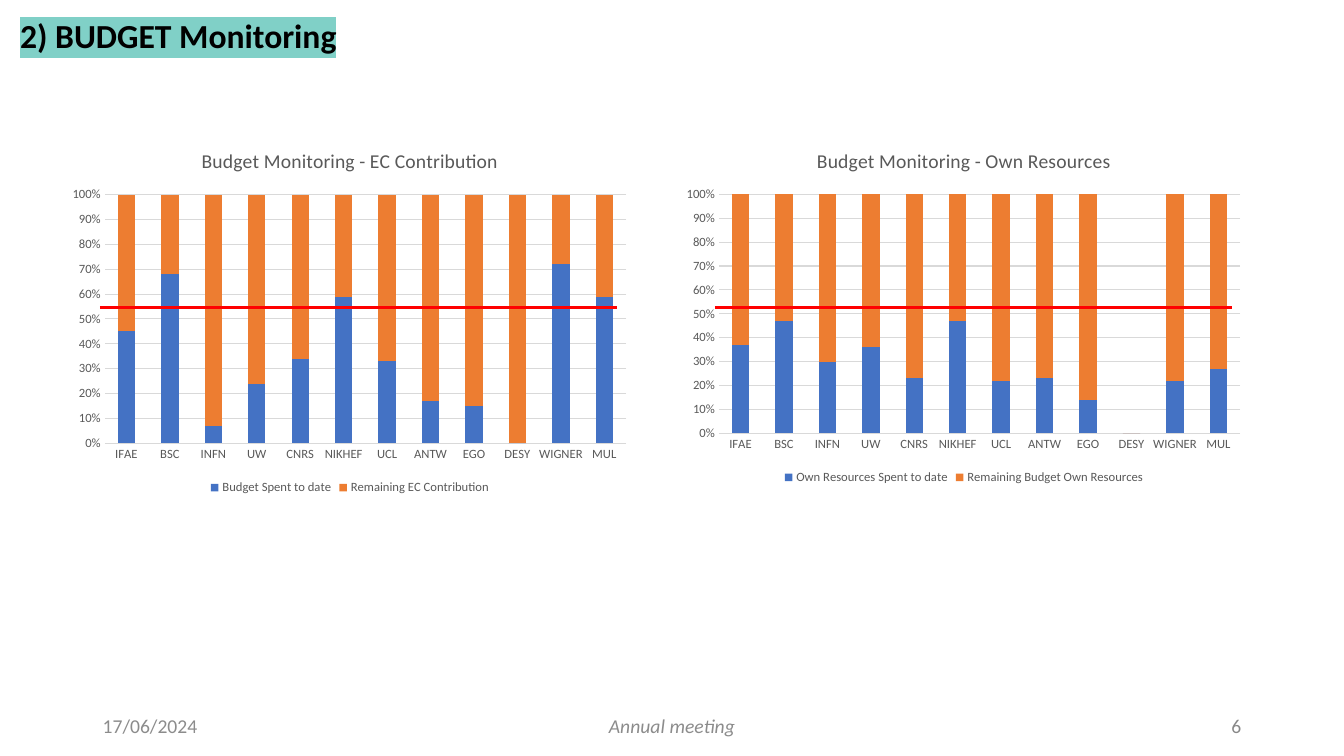
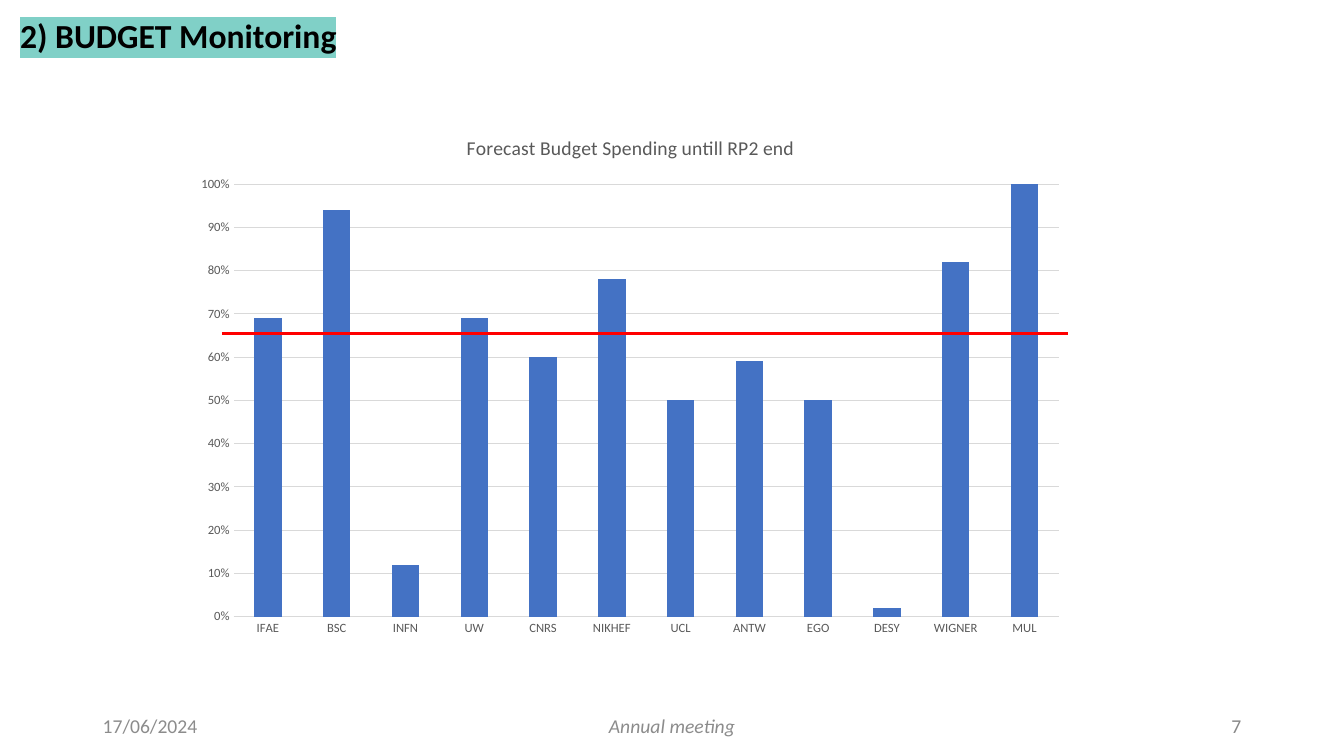
"""Builds two budget monitoring slides with column charts and target lines."""
import pptx
import pptx.chart.data
import pptx.dml.color
import pptx.enum.chart
import pptx.enum.shapes
import pptx.enum.text
import pptx.oxml
import pptx.oxml.ns
import pptx.util
from lxml import etree

WIDTH, HEIGHT = 13.33, 7.5
FONT = "Calibri"
COLOURS = {
    "ink": "000000", "highlight": "80D0C7", "footer": "8C8C8C", "number": "888888",
    "label": "595959", "grid": "D9D9D9", "target": "FF0000",
    "spent": "4472C4", "remaining": "ED7D31",
}
HEADING = "2) BUDGET Monitoring"
DATE, EVENT = "17/06/2024", "Annual meeting"
PARTNERS = ["IFAE", "BSC", "INFN", "UW", "CNRS", "NIKHEF",
            "UCL", "ANTW", "EGO", "DESY", "WIGNER", "MUL"]

SLIDES = [
    {"number": 6, "charts": [
        {"title": "Budget Monitoring - EC Contribution",
         "box": (0.61, 1.3, 5.72, 3.65), "plot": (0.075, 0.173, 0.904, 0.676),
         "target": (0.99, 6.12, 3.05),
         "series": [
             ("Budget Spent to date",
              [0.45, 0.68, 0.07, 0.24, 0.34, 0.59, 0.33, 0.17, 0.15, 0, 0.72, 0.59]),
             ("Remaining EC Contribution",
              [0.55, 0.32, 0.93, 0.76, 0.66, 0.41, 0.67, 0.83, 0.85, 1, 0.28, 0.41])]},
        {"title": "Budget Monitoring - Own Resources",
         "box": (6.7, 1.3, 5.72, 3.55), "plot": (0.075, 0.177, 0.904, 0.668),
         "target": (7.09, 12.22, 3.05),
         "series": [
             ("Own Resources Spent to date",
              [0.37, 0.47, 0.3, 0.36, 0.23, 0.47, 0.22, 0.23, 0.14, 0, 0.22, 0.27]),
             ("Remaining Budget Own Resources",
              [0.63, 0.53, 0.7, 0.64, 0.77, 0.53, 0.78, 0.77, 0.86, 0, 0.78, 0.73])]}]},
    {"number": 7, "charts": [
        {"title": "Forecast Budget Spending untill RP2 end",
         "box": (1.83, 1.14, 8.85, 5.28), "plot": (0.055, 0.13, 0.925, 0.813),
         "target": (2.2, 10.59, 3.31),
         "series": [
             ("Forecast Budget Spending untill RP2 end",
              [0.69, 0.94, 0.12, 0.69, 0.6, 0.78, 0.5, 0.59, 0.5, 0.02, 0.82, 1.07])]}]},
]


def inches(*lengths):
    return [pptx.util.Inches(length) for length in lengths]


def colour(name):
    return pptx.dml.color.RGBColor.from_string(COLOURS[name])


def style(font, size, name, bold=False, italic=False):
    font.name, font.size = FONT, pptx.util.Pt(size)
    font.bold, font.italic = bold, italic
    font.color.rgb = colour(name)


def draw_line(line, name, width):
    line.color.rgb = colour(name)
    line.width = pptx.util.Pt(width)


def add_heading(slide):
    heading = slide.shapes.title
    heading.left, heading.top, heading.width, heading.height = inches(0.1, 0.1, 3.37, 0.5)
    frame = heading.text_frame
    frame.word_wrap = False
    frame.auto_size = pptx.enum.text.MSO_AUTO_SIZE.SHAPE_TO_FIT_TEXT
    frame.vertical_anchor = pptx.enum.text.MSO_ANCHOR.TOP
    paragraph = frame.paragraphs[0]
    paragraph.alignment = pptx.enum.text.PP_ALIGN.LEFT
    run = paragraph.add_run()
    run.text = HEADING
    style(run.font, 24, "ink", bold=True)
    marker = pptx.oxml.parse_xml(
        f'<a:highlight {pptx.oxml.ns.nsdecls("a")}>'
        f'<a:srgbClr val="{COLOURS["highlight"]}"/></a:highlight>')
    run.font.fill._xPr.find(pptx.oxml.ns.qn("a:solidFill")).addnext(marker)


def add_footers(slide, number):
    align = pptx.enum.text.PP_ALIGN
    margin, side, middle = 0.92, 3, 4.5
    footers = [
        (DATE, margin, side, align.LEFT, "footer", False),
        (EVENT, (WIDTH - middle) / 2, middle, align.CENTER, "footer", True),
        (str(number), WIDTH - margin - side, side, align.RIGHT, "number", False),
    ]
    for text, left, width, alignment, name, italic in footers:
        frame = slide.shapes.add_textbox(*inches(left, 7, width, 0.4)).text_frame
        frame.word_wrap = True
        frame.vertical_anchor = pptx.enum.text.MSO_ANCHOR.MIDDLE
        paragraph = frame.paragraphs[0]
        paragraph.text = text
        paragraph.alignment = alignment
        style(paragraph.font, 14, name, italic=italic)


def place_plot(chart, shares):
    plot_area = chart._chartSpace.chart.plotArea
    for old in plot_area.findall(pptx.oxml.ns.qn("c:layout")):
        plot_area.remove(old)
    layout = etree.Element(pptx.oxml.ns.qn("c:layout"))
    manual = etree.SubElement(layout, pptx.oxml.ns.qn("c:manualLayout"))
    settings = [("layoutTarget", "inner"), ("xMode", "edge"), ("yMode", "edge")]
    settings += zip("xywh", shares)
    for tag, value in settings:
        etree.SubElement(manual, pptx.oxml.ns.qn(f"c:{tag}"), val=str(value))
    plot_area.insert(0, layout)


def add_budget_chart(slide, content):
    data = pptx.chart.data.CategoryChartData(number_format="0%")
    data.categories = PARTNERS
    for name, values in content["series"]:
        data.add_series(name, values)
    chart = slide.shapes.add_chart(
        pptx.enum.chart.XL_CHART_TYPE.COLUMN_STACKED, *inches(*content["box"]), data).chart
    style(chart.font, 10, "ink")

    chart.has_title = True
    title = chart.chart_title.text_frame.paragraphs[0]
    run = title.add_run()
    run.text = content["title"]
    style(run.font, 14, "label")
    chart.chart_title.include_in_layout = False

    chart.has_legend = len(content["series"]) > 1
    if chart.has_legend:
        chart.legend.position = pptx.enum.chart.XL_LEGEND_POSITION.BOTTOM
        chart.legend.include_in_layout = False
        style(chart.legend.font, 9, "label")

    partners, share = chart.category_axis, chart.value_axis
    for axis in (partners, share):
        axis.major_tick_mark = axis.minor_tick_mark = pptx.enum.chart.XL_TICK_MARK.NONE
        style(axis.tick_labels.font, 9, "label")
    draw_line(partners.format.line, "grid", 0.75)
    share.format.line.fill.background()
    draw_line(share.major_gridlines.format.line, "grid", 0.75)
    share.minimum_scale, share.maximum_scale, share.major_unit = 0, 1, 0.1
    share.tick_labels.number_format = "0%"
    share.tick_labels.number_format_is_linked = False

    columns = chart.plots[0]
    columns.gap_width, columns.overlap, columns.vary_by_categories = 150, 100, False
    for series, name in zip(columns.series, ("spent", "remaining")):
        series.format.fill.solid()
        series.format.fill.fore_color.rgb = colour(name)
    place_plot(chart, content["plot"])


def add_target(slide, start, end, height):
    target = slide.shapes.add_connector(
        pptx.enum.shapes.MSO_CONNECTOR.STRAIGHT, *inches(start, height, end, height))
    draw_line(target.line, "target", 2)
    etree.SubElement(target._element.spPr, pptx.oxml.ns.qn("a:effectLst"))


def main():
    deck = pptx.Presentation()
    deck.slide_width, deck.slide_height = inches(WIDTH, HEIGHT)
    for content in SLIDES:
        slide = deck.slides.add_slide(deck.slide_layouts[5])
        add_footers(slide, content["number"])
        add_heading(slide)
        for chart in content["charts"]:
            add_budget_chart(slide, chart)
        for chart in content["charts"]:
            add_target(slide, *chart["target"])
    deck.save("out.pptx")


if __name__ == "__main__":
    main()
